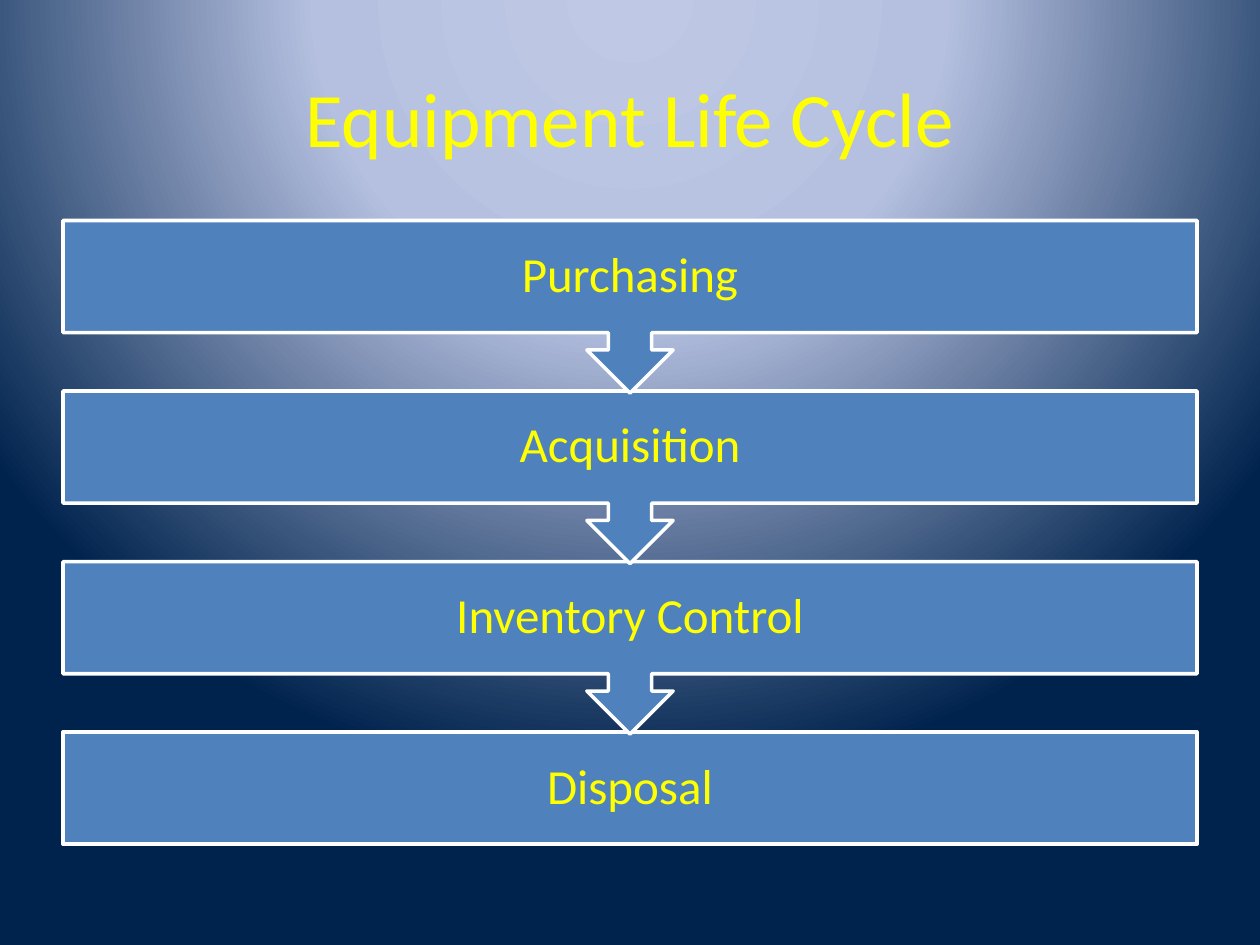
"""Build the Equipment Life Cycle slide."""
from dataclasses import dataclass

from lxml import etree
from pptx import Presentation
from pptx import util as u
from pptx.dml.color import RGBColor
from pptx.enum import shapes, text
from pptx.oxml import ns


@dataclass(frozen=True)
class Theme:
    """Colours, font and type sizes."""
    font: str = "Calibri"
    ink: str = "FFFF00"
    fill: str = "4F81BD"
    line: str = "FFFFFF"
    line_width: float = 2
    title_size: int = 44
    step_size: int = 28
    glow: tuple = ((0, "BFC9E5"), (40, "B5C0E0"), (100, "00234D"))


def write(tf, content, *, font, size, color, inset=0.1, spacing=1.0):
    """Put centred, formatted text in a text frame."""
    tf.word_wrap = True
    tf.vertical_anchor = text.MSO_ANCHOR.MIDDLE
    tf.margin_left = tf.margin_right = u.Inches(inset)
    tf.margin_top = tf.margin_bottom = u.Inches(min(inset, 0.22) if inset > 0.1 else 0.05)
    p = tf.paragraphs[0]
    p.alignment = text.PP_ALIGN.CENTER
    p.line_spacing = spacing
    r = p.add_run()
    r.text = content
    r.font.name = font
    r.font.size = u.Pt(size)
    r.font.color.rgb = RGBColor.from_string(color)


class Deck:
    """Holds the theme and the slide, and draws on a one-inch grid."""

    def __init__(self, theme, columns=10, rows=7.5):
        """Start a one-slide presentation."""
        self.theme = theme
        self.prs = Presentation()
        self.prs.slide_width = u.Inches(columns)
        self.prs.slide_height = u.Inches(rows)
        self.s = self.prs.slides.add_slide(self.prs.slide_layouts[6])

    def background(self):
        """Fill the background with a round glow from above the slide."""
        self.s.background.fill.gradient()
        grad = next(self.s.element.iter(ns.qn("a:gradFill")))
        for child in list(grad):
            grad.remove(child)
        stops = etree.SubElement(grad, ns.qn("a:gsLst"))
        for share, color in self.theme.glow:
            stop = etree.SubElement(stops, ns.qn("a:gs"), pos=str(share * 1000))
            etree.SubElement(stop, ns.qn("a:srgbClr"), val=color)
        circle = etree.SubElement(grad, ns.qn("a:path"), {"path": "circle"})
        etree.SubElement(circle, ns.qn("a:fillToRect"),
                         l="50000", t="-80000", r="50000", b="180000")

    def label(self, box, content, size, **style):
        """Add a text box."""
        sp = self.s.shapes.add_textbox(*map(u.Inches, box))
        write(sp.text_frame, content, font=self.theme.font, size=size,
              color=self.theme.ink, **style)

    def panel(self, kind, box, rotation=0):
        """Add a filled and outlined shape."""
        sp = self.s.shapes.add_shape(kind, *map(u.Inches, box))
        sp.rotation = rotation
        sp.shadow.inherit = False
        sp.fill.solid()
        sp.fill.fore_color.rgb = RGBColor.from_string(self.theme.fill)
        sp.line.color.rgb = RGBColor.from_string(self.theme.line)
        sp.line.width = u.Pt(self.theme.line_width)

    def flow(self, steps, left, top, width, last_top, body, callout):
        """Stack the steps, each pointing down to the next."""
        pitch = (last_top - top) / (len(steps) - 1)
        kinds = shapes.MSO_SHAPE
        for i, step in reversed(list(enumerate(steps))):
            y = top + i * pitch
            if i == len(steps) - 1:
                self.panel(kinds.RECTANGLE, (left, y, width, body))
            else:
                self.panel(kinds.UP_ARROW_CALLOUT, (left, y, width, callout), 180)
            self.label((left, y, width, body), step, self.theme.step_size,
                       inset=0.22, spacing=0.9)


def main():
    """Draw and save the slide."""
    deck = Deck(Theme())
    deck.background()
    deck.label((0.5, 0.3, 9, 1.25), "Equipment Life Cycle", deck.theme.title_size)
    deck.flow(("Purchasing", "Acquisition", "Inventory Control", "Disposal"),
              left=0.5, top=1.75, width=9, last_top=5.81, body=0.89, callout=1.37)
    deck.prs.save("out.pptx")


if __name__ == "__main__":
    main()
